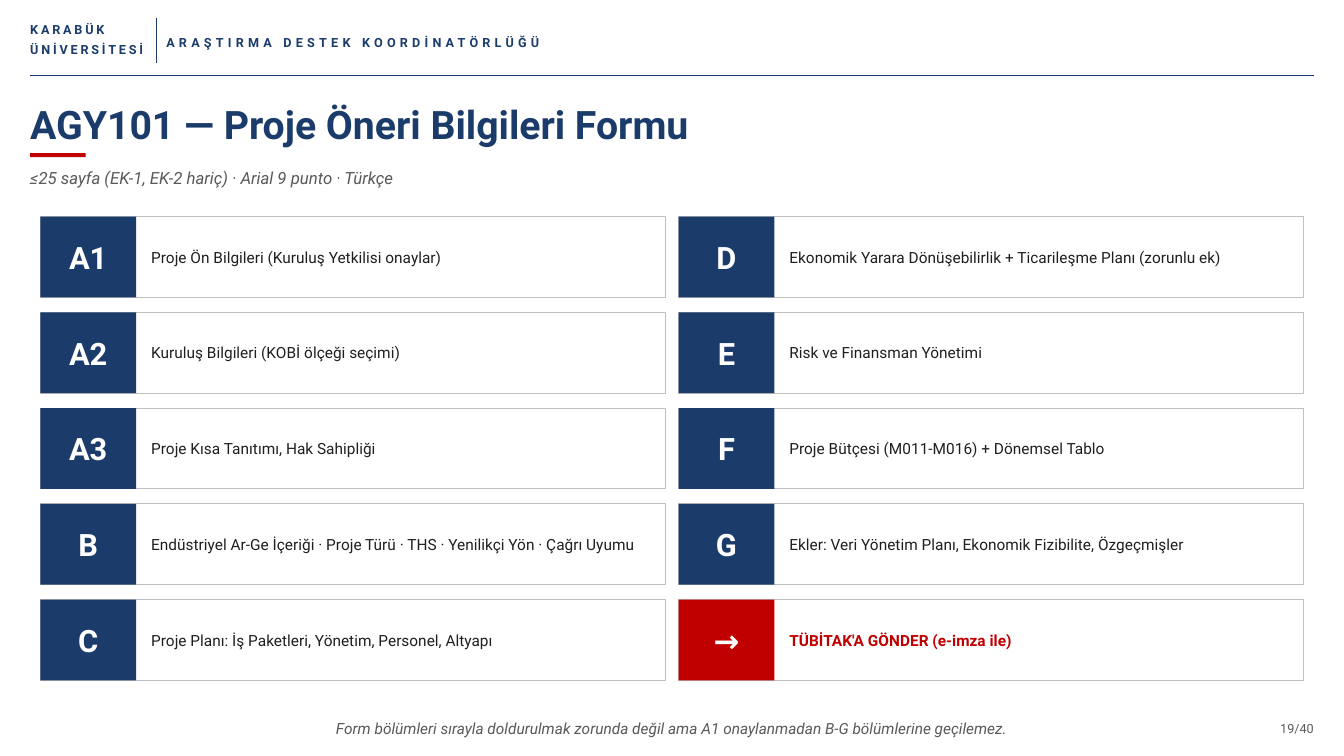
from pptx import Presentation
from pptx.dml.color import RGBColor
from pptx.enum.shapes import MSO_CONNECTOR, MSO_SHAPE
from pptx.enum.text import MSO_ANCHOR, MSO_AUTO_SIZE, PP_ALIGN
from pptx.oxml.ns import qn
from pptx.util import Inches, Pt
from lxml import etree

COLORS = {
    "navy": "1B3C6B",
    "red": "C00000",
    "gray": "595959",
    "border": "BFBFBF",
    "ink": "1F1F1F",
    "white": "FFFFFF",
}

presentation = Presentation()
presentation.slide_width = Inches(13.33)
presentation.slide_height = Inches(7.5)
slide = presentation.slides.add_slide(presentation.slide_layouts[5])


def write(shape, text, size, color, bold=False, italic=False,
          align=PP_ALIGN.LEFT, spacing=0):
    frame = shape.text_frame
    frame.text = text
    frame.word_wrap = True
    frame.auto_size = MSO_AUTO_SIZE.NONE
    frame.vertical_anchor = MSO_ANCHOR.MIDDLE
    frame.margin_left = frame.margin_right = 0
    frame.margin_top = frame.margin_bottom = 0
    paragraph = frame.paragraphs[0]
    paragraph.alignment = align
    run = paragraph.runs[0]
    run.font.name = "Roboto"
    run.font.size = Pt(size)
    run.font.bold = bold
    run.font.italic = italic
    run.font.color.rgb = RGBColor.from_string(COLORS[color])
    if spacing:
        run.font._element.set("spc", str(spacing * 100))


def add_box(left, top, width, height, fill, line=None):
    shape = slide.shapes.add_shape(
        MSO_SHAPE.RECTANGLE, Inches(left), Inches(top), Inches(width), Inches(height))
    shape.shadow.inherit = False
    shape.fill.solid()
    shape.fill.fore_color.rgb = RGBColor.from_string(COLORS[fill])
    if line:
        shape.line.color.rgb = RGBColor.from_string(COLORS[line])
        shape.line.width = Pt(0.75)
    else:
        shape.line.fill.background()
    return shape


# Title with its red accent
title = slide.shapes.title
title.left, title.top = Inches(0.3), Inches(0.95)
title.width, title.height = Inches(12.73), Inches(0.55)
write(title, "AGY101 — Proje Öneri Bilgileri Formu", 28, "navy", bold=True)
add_box(0.3, 1.52, 0.55, 0.04, "red")

# Header, subtitle, footnote and page number
heading = {"size": 9, "color": "navy", "bold": True}
texts = [
    (0.3, 0.18, 1.2, 0.22, "KARABÜK", {**heading, "spacing": 2}),
    (0.3, 0.38, 1.2, 0.22, "ÜNİVERSİTESİ", {**heading, "spacing": 2}),
    (1.65, 0.3, 6, 0.25, "ARAŞTIRMA DESTEK KOORDİNATÖRLÜĞÜ", {**heading, "spacing": 3}),
    (0.3, 1.6, 12.73, 0.32, "≤25 sayfa (EK-1, EK-2 hariç) · Arial 9 punto · Türkçe",
     {"size": 12, "color": "gray", "italic": True}),
    (0.4, 7.05, 12.53, 0.35,
     "Form bölümleri sırayla doldurulmak zorunda değil ama A1 onaylanmadan "
     "B-G bölümlerine geçilemez.",
     {"size": 11, "color": "gray", "italic": True, "align": PP_ALIGN.CENTER}),
    (12.13, 7.1, 0.9, 0.25, "19/40", {"size": 9, "color": "gray", "align": PP_ALIGN.RIGHT}),
]
for left, top, width, height, text, style in texts:
    text_box = slide.shapes.add_textbox(
        Inches(left), Inches(top), Inches(width), Inches(height))
    write(text_box, text, **style)

# Header rules
for x1, y1, x2, y2, weight in [(1.55, 0.18, 1.55, 0.63, 1), (0.3, 0.75, 13.03, 0.75, 0.75)]:
    rule = slide.shapes.add_connector(
        MSO_CONNECTOR.STRAIGHT, Inches(x1), Inches(y1), Inches(x2), Inches(y2))
    rule.line.color.rgb = RGBColor.from_string(COLORS["navy"])
    rule.line.width = Pt(weight)
    etree.SubElement(rule._element.spPr, qn("a:effectLst"))

# Form sections: two columns of five cards
sections = [
    ("A1", "Proje Ön Bilgileri (Kuruluş Yetkilisi onaylar)"),
    ("A2", "Kuruluş Bilgileri (KOBİ ölçeği seçimi)"),
    ("A3", "Proje Kısa Tanıtımı, Hak Sahipliği"),
    ("B", "Endüstriyel Ar-Ge İçeriği · Proje Türü · THS · Yenilikçi Yön · Çağrı Uyumu"),
    ("C", "Proje Planı: İş Paketleri, Yönetim, Personel, Altyapı"),
    ("D", "Ekonomik Yarara Dönüşebilirlik + Ticarileşme Planı (zorunlu ek)"),
    ("E", "Risk ve Finansman Yönetimi"),
    ("F", "Proje Bütçesi (M011-M016) + Dönemsel Tablo"),
    ("G", "Ekler: Veri Yönetim Planı, Ekonomik Fizibilite, Özgeçmişler"),
    ("→", "TÜBİTAK'A GÖNDER (e-imza ile)"),
]
ROWS = 5
for index, (code, description) in enumerate(sections):
    column, row = divmod(index, ROWS)
    left = 0.4 + column * 6.33
    top = 2.15 + row * 0.95
    is_submit = code == "→"
    add_box(left, top, 6.2, 0.8, "white", line="border")
    badge = add_box(left, top, 0.95, 0.8, "red" if is_submit else "navy")
    write(badge, code, 22, "white", bold=True, align=PP_ALIGN.CENTER)
    label = slide.shapes.add_textbox(
        Inches(left + 1.1), Inches(top), Inches(5), Inches(0.8))
    write(label, description, 11, "red" if is_submit else "ink", bold=is_submit)

presentation.save("out.pptx")
